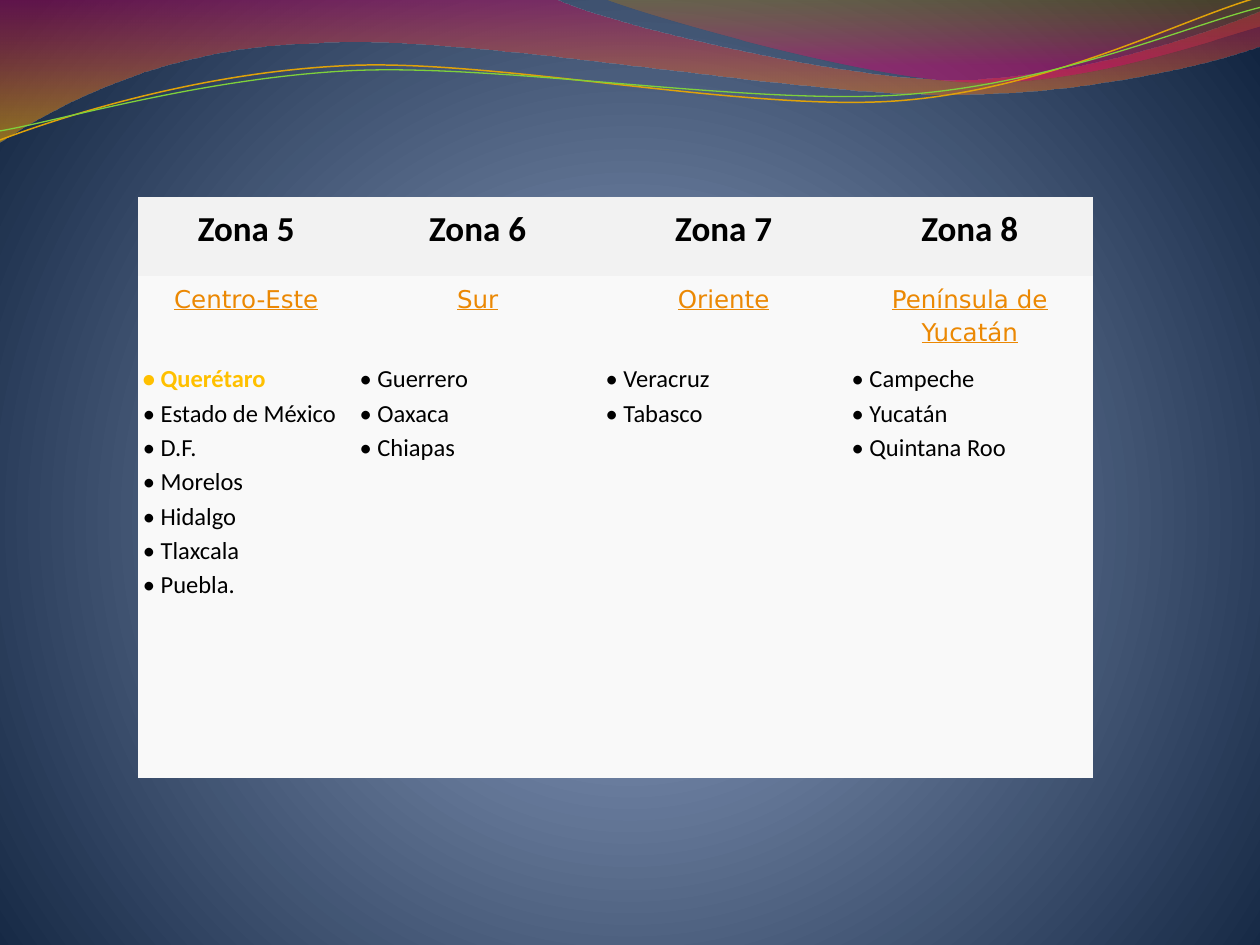
from copy import deepcopy
from math import cos, radians, sin

from lxml.etree import SubElement
from pptx import Presentation
from pptx.dml.color import RGBColor
from pptx.enum.text import PP_ALIGN as Align
from pptx.oxml.ns import qn
from pptx.util import Cm, Pt

PLAIN_TABLE = "{2D5ABB26-0587-4C30-8999-92F81FD0307C}"
LINE_TILT = -2.7

BAND = [
    [(0, 0)], [(11.18, -0.03)],
    [(12.09, 0.43), (16.87, 1.6), (19.25, 1.6)],
    [(21.67, 1.6), (24.33, 0.66), (25.4, 0.23)],
    [(25.43, 0.91)],
    [(24.97, 1.12), (22.1, 1.93), (18.95, 1.9)],
    [(15.8, 1.9), (9.7, 0.71), (6.53, 0.86)],
    [(3.28, 0.91), (1.17, 2.11), (-0.03, 2.87)],
]
CREST = [
    [(12.17, -0.03)],
    [(12.93, 0.28), (17.32, 1.57), (19.53, 1.65)],
    [(21.74, 1.75), (24.41, 0.81), (25.4, 0.53)],
    [(25.4, 0)],
]
ORANGE_LINE = [
    [(0, 2.82)],
    [(1.22, 2.36), (4.01, 1.45), (7.04, 1.32)],
    [(10.03, 1.19), (15.06, 2.26), (18.11, 2.03)],
    [(21.16, 1.8), (23.83, 0.38), (25.35, -0.05)],
]
GREEN_LINE = [
    [(0, 2.64)],
    [(1.19, 2.44), (4.17, 1.55), (7.19, 1.42)],
    [(10.24, 1.3), (15.16, 2.13), (18.21, 1.91)],
    [(21.23, 1.7), (23.9, 0.53), (25.4, 0.15)],
]
ZONES = [
    ("Zona 5", "Centro-Este",
     ["Querétaro", "Estado de México", "D.F.", "Morelos", "Hidalgo", "Tlaxcala", "Puebla."]),
    ("Zona 6", "Sur", ["Guerrero", "Oaxaca", "Chiapas"]),
    ("Zona 7", "Oriente", ["Veracruz", "Tabasco"]),
    ("Zona 8", "Península de Yucatán", ["Campeche", "Yucatán", "Quintana Roo"]),
]


def color(code):
    return RGBColor.from_string(code)


def turn(segments, center, degrees):
    cosine, sine = cos(radians(degrees)), sin(radians(degrees))
    center_x, center_y = center
    return [[(center_x + (x - center_x) * cosine - (y - center_y) * sine,
              center_y + (x - center_x) * sine + (y - center_y) * cosine)
             for x, y in segment] for segment in segments]


class Deck:
    body_font = "Calibri"
    region_font = "DejaVu Sans"
    text_color = "000000"
    region_color = "EB8803"
    highlight = "FFC000"
    header_fill = "F2F2F2"
    body_fill = "F9F9F9"

    def __init__(self, presentation):
        self.slide = presentation.slides.add_slide(presentation.slide_layouts[6])

    def gradient(self, fill, element, stops):
        fill.gradient()
        gradient = element.find(".//" + qn("a:gradFill"))
        gradient.clear()
        stop_list = SubElement(gradient, qn("a:gsLst"))
        for position, code, opacity in stops:
            stop = SubElement(stop_list, qn("a:gs"), pos=str(position * 1000))
            tint = SubElement(stop, qn("a:srgbClr"), val=code)
            if opacity < 100:
                SubElement(tint, qn("a:alpha"), val=str(opacity * 1000))
        return gradient

    def background(self, stops):
        gradient = self.gradient(self.slide.background.fill, self.slide.element, stops)
        circle = SubElement(gradient, qn("a:path"), {"path": "circle"})
        SubElement(circle, qn("a:fillToRect"), l="10000", t="110000", r="10000", b="100000")

    def freeform(self, segments, close):
        ends = [(Cm(segment[-1][0]), Cm(segment[-1][1])) for segment in segments]
        builder = self.slide.shapes.build_freeform(*ends[0])
        builder.add_line_segments(ends[1:], close=close)
        shape = builder.convert_to_shape()
        shape.shadow.inherit = False
        lines = shape.element.findall(".//" + qn("a:lnTo"))
        for line, segment in zip(lines, segments[1:]):
            if len(segment) == 3:
                line.clear()
                line.tag = qn("a:cubicBezTo")
                for x, y in segment:
                    SubElement(line, qn("a:pt"), x=str(Cm(x) - shape.left), y=str(Cm(y) - shape.top))
        return shape

    def wave(self, segments, stops):
        shape = self.freeform(segments, True)
        gradient = self.gradient(shape.fill, shape.element, stops)
        SubElement(gradient, qn("a:lin"), ang="5400000", scaled="0")
        shape.line.fill.background()

    def curve(self, segments, center, code, width):
        shape = self.freeform(turn(segments, center, -LINE_TILT), False)
        shape.rotation = LINE_TILT
        shape.fill.background()
        shape.line.color.rgb = color(code)
        shape.line.width = Pt(width)

    def run(self, paragraph, text, size, font, code, bold=False, underline=False):
        run = paragraph.add_run()
        run.text = text
        run.font.size = Pt(size)
        run.font.name = font
        run.font.color.rgb = color(code)
        run.font.bold = bold
        run.font.underline = underline
        return run

    def cell(self, cell, fill, alignment):
        cell.fill.solid()
        cell.fill.fore_color.rgb = color(fill)
        cell.margin_left = cell.margin_right = cell.margin_top = cell.margin_bottom = Cm(0.1)
        paragraph = cell.text_frame.paragraphs[0]
        paragraph.alignment = alignment
        paragraph.line_spacing = 1.15
        paragraph.space_before = paragraph.space_after = Pt(12)
        return paragraph

    def states(self, paragraph, names):
        for index, name in enumerate(names):
            marked = name == "Querétaro"
            code = self.highlight if marked else self.text_color
            run = self.run(paragraph, f"• {name}", 14, self.body_font, code, bold=marked)
            if index < len(names) - 1:
                paragraph.add_line_break()
                paragraph._p[-1].append(deepcopy(run._r.rPr))

    def zone_table(self, zones, left, top, widths, heights):
        frame = self.slide.shapes.add_table(
            len(heights), len(widths), Cm(left), Cm(top), Cm(sum(widths)), Cm(sum(heights)))
        table = frame.table
        table.first_row = table.horz_banding = False
        table._tbl.tblPr.find(qn("a:tableStyleId")).text = PLAIN_TABLE
        for row, height in zip(table.rows, heights):
            row.height = Cm(height)
        for index, (title, region, names) in enumerate(zones):
            table.columns[index].width = Cm(widths[index])
            header = self.cell(table.cell(0, index), self.header_fill, Align.CENTER)
            self.run(header, title, 20, self.body_font, self.text_color, bold=True)
            area = self.cell(table.cell(1, index), self.body_fill, Align.CENTER)
            self.run(area, region, 14, self.region_font, self.region_color, underline=True)
            self.states(self.cell(table.cell(2, index), self.body_fill, Align.LEFT), names)


def main():
    presentation = Presentation()
    presentation.slide_width = Cm(25.4)
    presentation.slide_height = Cm(19.05)
    deck = Deck(presentation)
    deck.background([(0, "768BB1", 100), (25, "7386A7", 100), (100, "122541", 100)])
    deck.wave(BAND, [(0, "BD0059", 45), (100, "F0AB00", 55)])
    deck.wave(CREST, [(0, "C38B00", 30), (80, "E1006B", 45)])
    deck.curve(ORANGE_LINE, (12.67, 1.46), "E0A209", 0.85)
    deck.curve(GREEN_LINE, (12.69, 1.5), "7FD13B", 0.75)
    deck.zone_table(ZONES, 2.78, 3.97, [4.37] + [4.96] * 3, [1.6, 1.59, 8.53])
    presentation.save("out.pptx")


if __name__ == "__main__":
    main()
